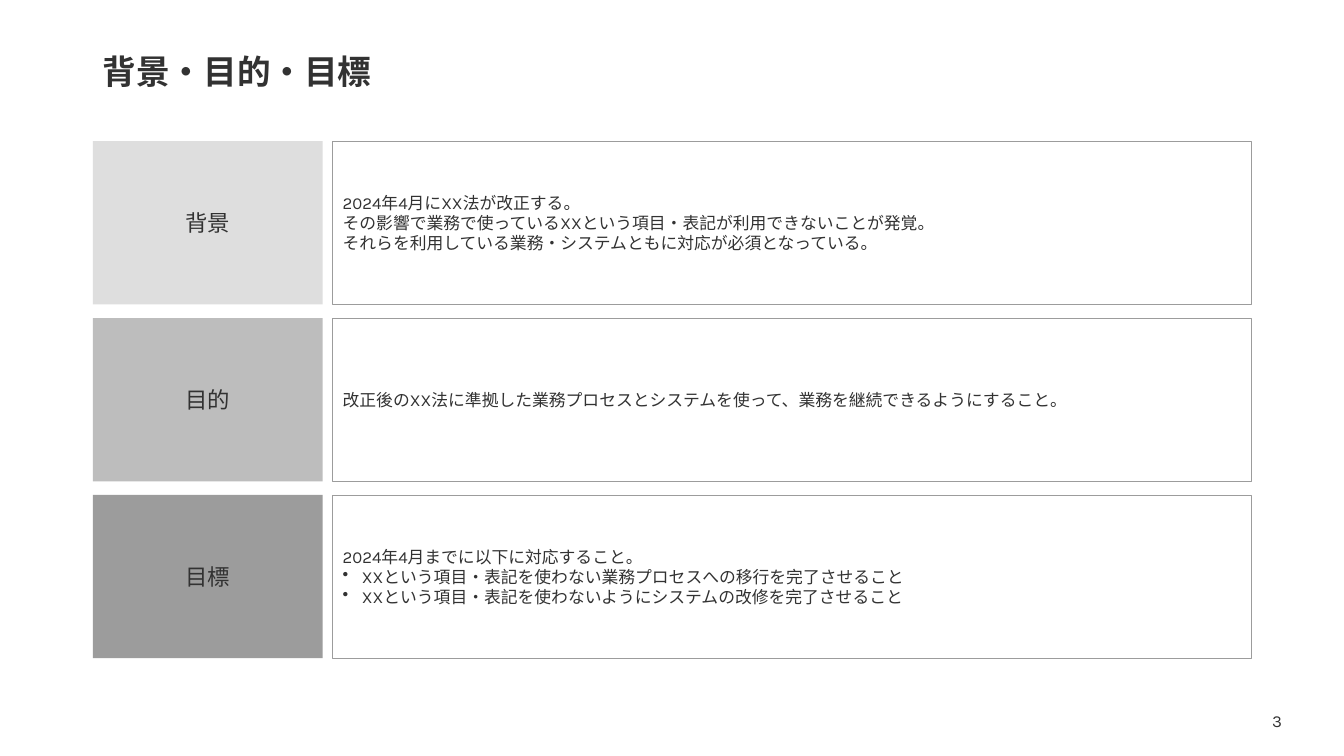
from dataclasses import dataclass

from lxml import etree
from pptx import Presentation
from pptx import util as u
from pptx.dml import color
from pptx.enum import shapes, text
from pptx.oxml import ns


@dataclass(frozen=True)
class Theme:
    font: str = "Karla"
    ink: str = "323232"
    border: str = "9C9C9C"
    title_size: int = 24
    label_size: int = 16
    body_size: int = 12
    border_width: float = 0.5


THEME = Theme()
BULLET = "• "
ROW_GAP = 0.135
LABEL_WIDTH = 2.28
COLUMN_GAP = 0.1

ROWS = [
    ("背景", "DEDEDE", [
        "2024年4月にXX法が改正する。",
        "その影響で業務で使っているXXという項目・表記が利用できないことが発覚。",
        "それらを利用している業務・システムともに対応が必須となっている。",
    ]),
    ("目的", "BDBDBD", [
        "改正後のXX法に準拠した業務プロセスとシステムを使って、業務を継続できるようにすること。",
    ]),
    ("目標", "9C9C9C", [
        "2024年4月までに以下に対応すること。",
        BULLET + "XXという項目・表記を使わない業務プロセスへの移行を完了させること",
        BULLET + "XXという項目・表記を使わないようにシステムの改修を完了させること",
    ]),
]


def rgb(value):
    return color.RGBColor.from_string(value)


def add_bullet(paragraph):
    properties = paragraph._p.get_or_add_pPr()
    indent = u.Inches(0.19)
    properties.set("marL", str(indent))
    properties.set("indent", str(-indent))
    bullet = etree.Element(ns.qn("a:buChar"), char=BULLET.strip())
    properties.insert(0, bullet)


def write_text(shape, lines, size, align, bold=False):
    frame = shape.text_frame
    frame.word_wrap = True
    frame.vertical_anchor = text.MSO_ANCHOR.MIDDLE
    for index, line in enumerate(lines):
        paragraph = frame.paragraphs[0] if index == 0 else frame.add_paragraph()
        paragraph.text = line.removeprefix(BULLET)
        paragraph.alignment = align
        font = paragraph.font
        font.name = THEME.font
        font.size = u.Pt(size)
        font.bold = bold
        font.color.rgb = rgb(THEME.ink)
        defaults = paragraph._p.pPr.find(ns.qn("a:defRPr"))
        etree.SubElement(defaults, ns.qn("a:ea"), typeface=THEME.font)
        if line.startswith(BULLET):
            add_bullet(paragraph)


def add_text(slide, box, line, size, align, bold=False):
    shape = slide.shapes.add_textbox(*map(u.Inches, box))
    write_text(shape, [line], size, align, bold)
    return shape


def add_panel(slide, box, fill=None, border=None):
    shape = slide.shapes.add_shape(shapes.MSO_SHAPE.RECTANGLE, *map(u.Inches, box))
    shape.shadow.inherit = False
    if fill:
        shape.fill.solid()
        shape.fill.fore_color.rgb = rgb(fill)
    else:
        shape.fill.background()
    if border:
        shape.line.color.rgb = rgb(border)
        shape.line.width = u.Pt(THEME.border_width)
    else:
        shape.line.fill.background()
    return shape


def add_title(slide, box, line):
    title = add_text(slide, box, line, THEME.title_size, text.PP_ALIGN.LEFT, bold=True)
    title.text_frame.paragraphs[0].line_spacing = 0.9


def add_row(slide, box, label, fill, lines):
    left, top, width, height = box
    label_panel = add_panel(slide, (left, top, LABEL_WIDTH, height), fill=fill)
    write_text(label_panel, [label], THEME.label_size, text.PP_ALIGN.CENTER)
    offset = LABEL_WIDTH + COLUMN_GAP
    body_box = (left + offset, top, width - offset, height)
    body_panel = add_panel(slide, body_box, border=THEME.border)
    write_text(body_panel, lines, THEME.body_size, text.PP_ALIGN.LEFT)


def add_rows(slide, box, rows):
    left, top, width, height = box
    row_height = (height - ROW_GAP * (len(rows) - 1)) / len(rows)
    for index, (label, fill, lines) in enumerate(rows):
        row_top = top + index * (row_height + ROW_GAP)
        add_row(slide, (left, row_top, width, row_height), label, fill, lines)


def main():
    presentation = Presentation()
    presentation.slide_width = u.Inches(13.33)
    presentation.slide_height = u.Inches(7.5)
    slide = presentation.slides.add_slide(presentation.slide_layouts[6])
    add_title(slide, (0.92, 0.4, 11.5, 0.67), "背景・目的・目標")
    add_rows(slide, (0.92, 1.4, 11.49, 5.13), ROWS)
    add_text(slide, (12.42, 6.95, 0.49, 0.4), "3", THEME.body_size, text.PP_ALIGN.CENTER)
    presentation.save("out.pptx")


if __name__ == "__main__":
    main()
